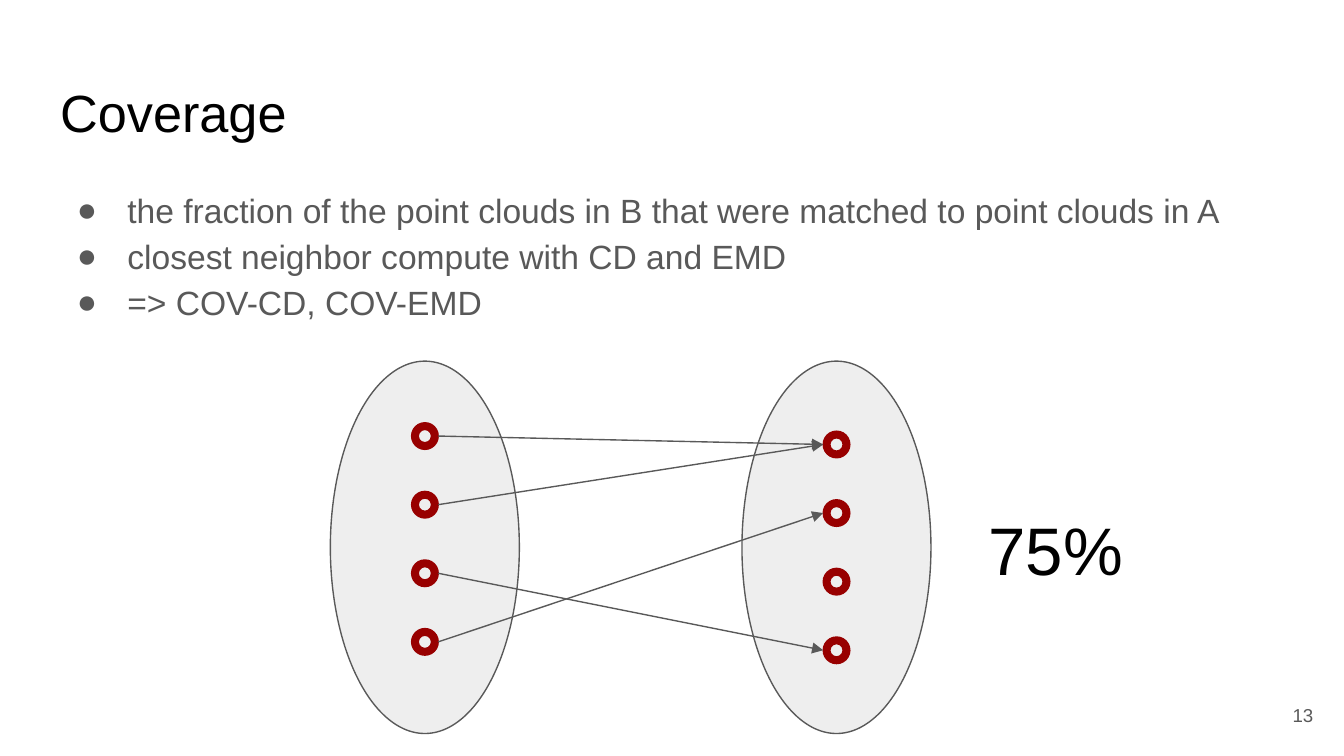
from dataclasses import dataclass

from lxml.etree import SubElement
from pptx import Presentation
from pptx.dml.color import RGBColor
from pptx.enum.shapes import MSO_CONNECTOR, MSO_SHAPE
from pptx.enum.text import MSO_ANCHOR, MSO_AUTO_SIZE, PP_ALIGN
from pptx.oxml.ns import qn
from pptx.util import Pt

SCALE = 9525
FONT = "Arial"
BLACK, GRAY, PALE, RED = "000000", "595959", "EEEEEE", "980000"
POINT_SIZE = 19
POINT_STEP = 49
POINT_COUNT = 4


@dataclass(frozen=True)
class Box:
    left: int
    top: int
    width: int
    height: int


@dataclass(frozen=True)
class Cloud:
    outline: Box
    points_left: int
    points_top: int

    def point(self, index: int) -> Box:
        top = self.points_top + index * POINT_STEP
        return Box(self.points_left, top, POINT_SIZE, POINT_SIZE)


@dataclass(frozen=True)
class Match:
    source: int
    target: int


CLOUD_A = Cloud(Box(236, 258, 135, 266), 294, 302)
CLOUD_B = Cloud(Box(530, 258, 135, 266), 588, 308)
MATCHES = [Match(0, 0), Match(1, 0), Match(2, 3), Match(3, 1)]
BULLETS = [
    "the fraction of the point clouds in B that were matched to point clouds in A",
    "closest neighbor compute with CD and EMD",
    "=> COV-CD, COV-EMD",
]


def px(length: int) -> int:
    return length * SCALE


def color(value: str) -> RGBColor:
    return RGBColor.from_string(value)


def place(box: Box) -> tuple[int, int, int, int]:
    return px(box.left), px(box.top), px(box.width), px(box.height)


def write(shape, lines: list[str], size: int, ink: str,
          align=PP_ALIGN.LEFT, anchor=MSO_ANCHOR.TOP) -> None:
    frame = shape.text_frame
    frame.text = "\n".join(lines)
    frame.word_wrap = True
    frame.auto_size = MSO_AUTO_SIZE.NONE
    frame.vertical_anchor = anchor
    frame.margin_left = frame.margin_right = px(10)
    frame.margin_top = frame.margin_bottom = px(10)
    for para in frame.paragraphs:
        para.alignment = align
        for span in para.runs:
            span.font.name = FONT
            span.font.size = Pt(size)
            span.font.color.rgb = color(ink)


def add_text(page, box: Box, lines: list[str], size: int, ink: str, **options):
    shape = page.shapes.add_textbox(*place(box))
    write(shape, lines, size, ink, **options)
    return shape


def add_bullets(shape) -> None:
    for para in shape.text_frame.paragraphs:
        para.line_spacing = 1.15
        properties = para._p.get_or_add_pPr()
        properties.set("marL", str(px(48)))
        properties.set("indent", str(px(-36)))
        bullet_color = SubElement(properties, qn("a:buClr"))
        SubElement(bullet_color, qn("a:srgbClr"), val=GRAY)
        SubElement(properties, qn("a:buFont"), typeface=FONT)
        SubElement(properties, qn("a:buChar"), char="●")


def add_figure(page, kind: MSO_SHAPE, box: Box, fill: str, line: str):
    shape = page.shapes.add_shape(kind, *place(box))
    shape.shadow.inherit = False
    shape.fill.solid()
    shape.fill.fore_color.rgb = color(fill)
    shape.line.color.rgb = color(line)
    shape.line.width = Pt(0.75)
    return shape


def add_points(page, cloud: Cloud) -> None:
    for index in range(POINT_COUNT):
        ring = add_figure(page, MSO_SHAPE.DONUT, cloud.point(index), RED, RED)
        ring.adjustments[0] = 0.25


def add_arrow(page, source: Box, target: Box) -> None:
    arrow = page.shapes.add_connector(
        MSO_CONNECTOR.STRAIGHT,
        px(source.left + source.width), px(source.top) + px(source.height) // 2,
        px(target.left), px(target.top) + px(target.height) // 2,
    )
    arrow.line.color.rgb = color(GRAY)
    arrow.line.width = Pt(0.75)
    SubElement(arrow.line._get_or_add_ln(), qn("a:tailEnd"), type="triangle")
    SubElement(arrow._element.spPr, qn("a:effectLst"))


def main() -> None:
    deck = Presentation()
    deck.slide_width, deck.slide_height = px(960), px(540)
    page = deck.slides.add_slide(deck.slide_layouts[5])

    title = page.shapes.title
    title.left, title.top, title.width, title.height = place(Box(33, 47, 895, 60))
    write(title, ["Coverage"], 28, BLACK)
    add_bullets(add_text(page, Box(33, 121, 895, 359), BULLETS, 18, GRAY))

    for cloud in (CLOUD_A, CLOUD_B):
        add_figure(page, MSO_SHAPE.OVAL, cloud.outline, PALE, GRAY)
    for cloud in (CLOUD_A, CLOUD_B):
        add_points(page, cloud)
    for match in MATCHES:
        add_arrow(page, CLOUD_A.point(match.source), CLOUD_B.point(match.target))

    add_text(page, Box(696, 353, 165, 84), ["75%"], 36, BLACK)
    add_text(page, Box(890, 490, 58, 41), ["13"], 10, GRAY,
             align=PP_ALIGN.RIGHT, anchor=MSO_ANCHOR.MIDDLE)
    deck.save("out.pptx")


if __name__ == "__main__":
    main()
